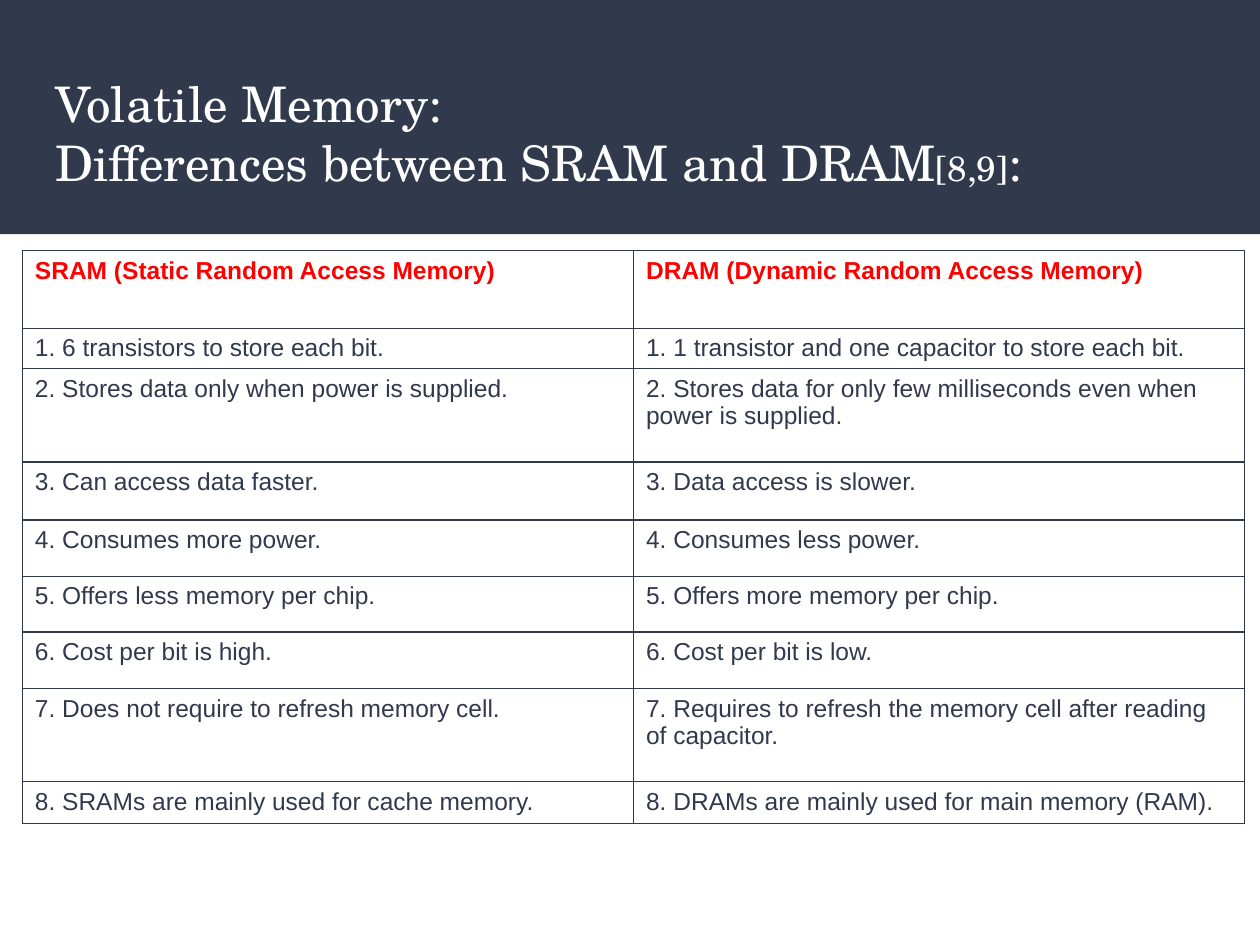
from pptx import Presentation
from pptx.dml.color import RGBColor
from pptx.enum.shapes import MSO_SHAPE
from pptx.enum.text import MSO_ANCHOR, MSO_AUTO_SIZE, PP_ALIGN
from pptx.oxml.ns import qn
from pptx.util import Cm, Pt
from lxml import etree

RECT = MSO_SHAPE.RECTANGLE
TOP = MSO_ANCHOR.TOP
LEFT = PP_ALIGN.LEFT
NO_FIT = MSO_AUTO_SIZE.NONE

NAVY = RGBColor(0x31, 0x39, 0x4D)
RED = RGBColor(0xFF, 0x00, 0x00)
WHITE = RGBColor(0xFF, 0xFF, 0xFF)

HEADS = ("SRAM (Static Random Access Memory)",
         "DRAM (Dynamic Random Access Memory)")
# Row height in cm, SRAM text, DRAM text
ROWS = [
    (0.81, "6 transistors to store each bit.",
     "1 transistor and one capacitor to store each bit."),
    (1.88, "Stores data only when power is supplied.",
     "Stores data for only few milliseconds even when power is supplied."),
    (1.17, "Can access data faster.", "Data access is slower."),
    (1.14, "Consumes more power.", "Consumes less power."),
    (1.12, "Offers less memory per chip.", "Offers more memory per chip."),
    (1.14, "Cost per bit is high.", "Cost per bit is low."),
    (1.88, "Does not require to refresh memory cell.",
     "Requires to refresh the memory cell after reading of capacitor."),
    (0.84, "SRAMs are mainly used for cache memory.",
     "DRAMs are mainly used for main memory (RAM)."),
]


def add_run(para, text, font, size, color, bold=False):
    run = para.add_run()
    run.text = text
    run.font.name = font
    run.font.size = Pt(size)
    run.font.color.rgb = color
    run.font.bold = bold


def add_head(slide, left, top, width, height):
    # Band, sent behind the title
    band = slide.shapes.add_shape(RECT, left, top, width, height)
    band.shadow.inherit = False
    band.fill.solid()
    band.fill.fore_color.rgb = NAVY
    band.line.fill.background()
    slide.shapes._spTree.insert(2, band._element)

    # Title
    title = slide.shapes.title
    title.left, title.top = left + Cm(0.86), top + Cm(1.24)
    title.width, title.height = width - Cm(1.72), Cm(2.31)
    frame = title.text_frame
    frame.word_wrap = True
    frame.auto_size = NO_FIT
    frame.vertical_anchor = TOP
    frame.margin_left = frame.margin_right = Cm(0.25)
    frame.margin_top = frame.margin_bottom = Cm(0.25)
    para = frame.paragraphs[0]
    para.alignment = LEFT
    add_run(para, "Volatile Memory: ", "TeX Gyre Schola", 28, WHITE)
    para.add_line_break()
    for text, size in (("Differences between SRAM and DRAM", 28),
                       ("[8,9]", 20), (":", 28)):
        add_run(para, text, "TeX Gyre Schola", size, WHITE)


def add_edges(cell):
    props = cell._tc.get_or_add_tcPr()
    for spot, tag in enumerate(("a:lnL", "a:lnR", "a:lnT", "a:lnB")):
        line = etree.Element(qn(tag), w=str(Pt(1)))
        fill = etree.SubElement(line, qn("a:solidFill"))
        etree.SubElement(fill, qn("a:srgbClr"), val=str(NAVY))
        props.insert(spot, line)


def fill_cell(cell, text, color, bold):
    cell.fill.solid()
    cell.fill.fore_color.rgb = WHITE
    add_edges(cell)
    add_run(cell.text_frame.paragraphs[0], text, "Arial", 14, color, bold)


def add_grid(slide, left, top, width):
    rows = [(1.57, *HEADS)]
    for num, (high, *texts) in enumerate(ROWS, 1):
        rows.append((high, *(f"{num}. {text}" for text in texts)))
    total = Cm(sum(row[0] for row in rows))
    table = slide.shapes.add_table(
        len(rows), len(HEADS), left, top, width, total).table
    table.first_row = table.horz_banding = False
    for y, (high, *texts) in enumerate(rows):
        table.rows[y].height = Cm(high)
        for x, text in enumerate(texts):
            fill_cell(table.cell(y, x), text, NAVY if y else RED, y == 0)


def main():
    deck = Presentation()
    deck.slide_width, deck.slide_height = Cm(25.4), Cm(19.05)
    slide = deck.slides.add_slide(deck.slide_layouts[5])
    add_head(slide, 0, 0, deck.slide_width, Cm(4.72))
    add_grid(slide, Cm(0.45), Cm(5.05), Cm(24.64))
    deck.save("out.pptx")


if __name__ == "__main__":
    main()
